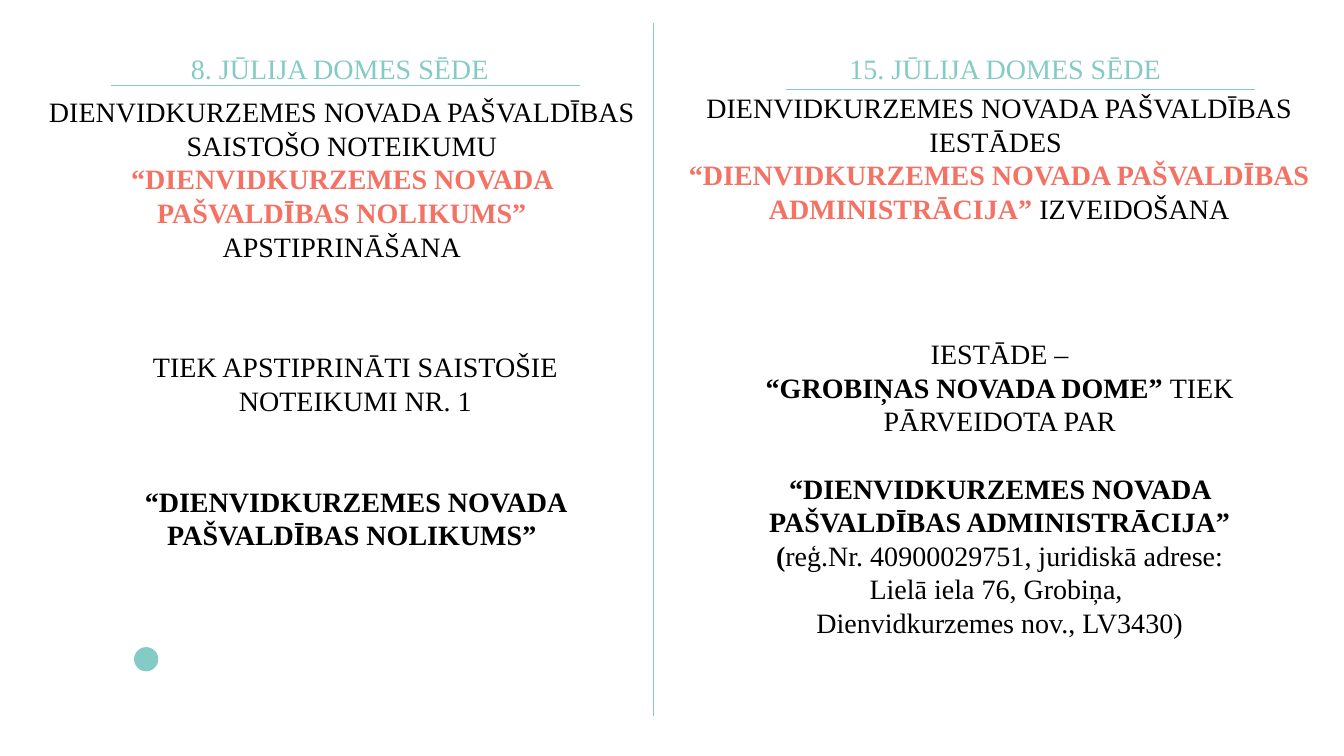
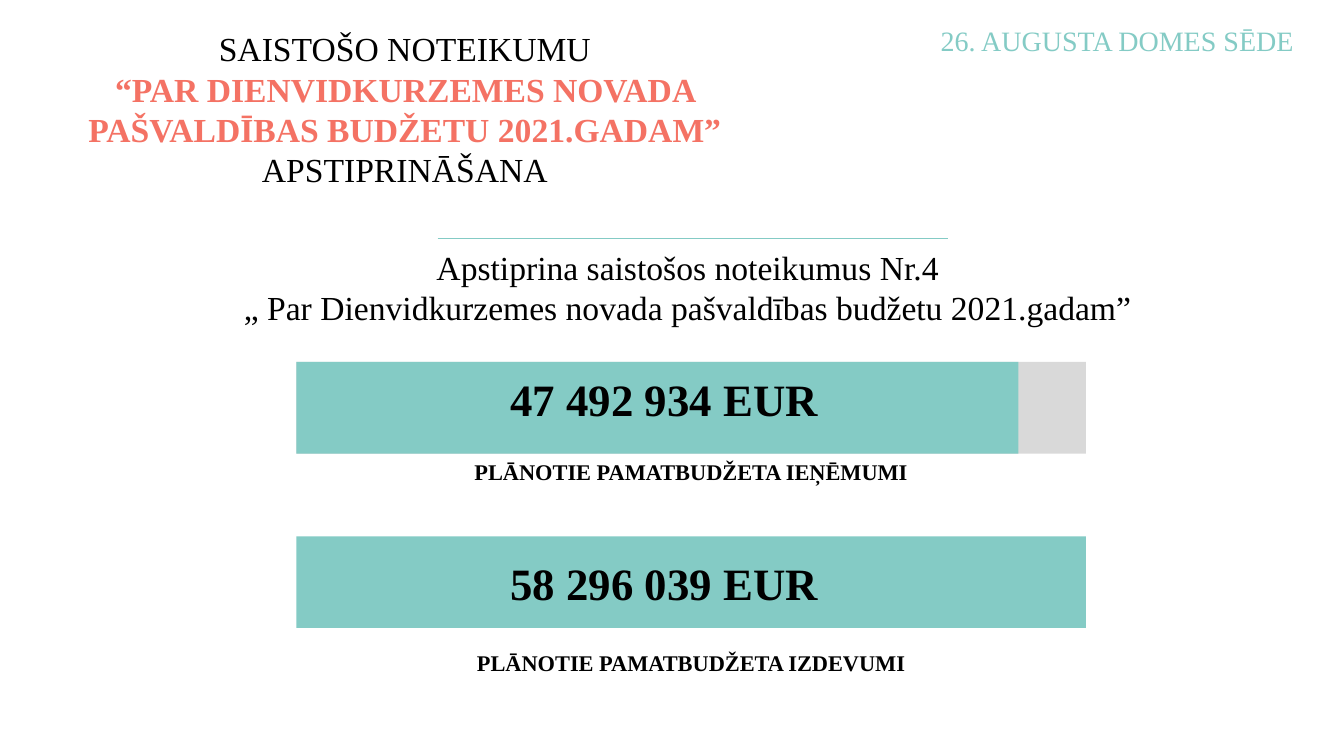
from pptx import Presentation
from pptx.dml.color import RGBColor
from pptx.enum.shapes import MSO_CONNECTOR as Link, MSO_SHAPE as Kind
from pptx.enum.text import PP_ALIGN as Align
from pptx.oxml.ns import qn
from pptx.util import Inches, Pt
from lxml.etree import SubElement

WIDE, HIGH = 13.33, 7.5
FONT = "Times New Roman"
TEAL, CORAL, BLACK, GREY = "84CBC5", "F47264", "000000", "D9D9D9"


def tint(code):
    """Turn a hex string into a colour."""
    return RGBColor.from_string(code)


def plain(text):
    """Describe a regular black run."""
    return text, BLACK, False


def bold(text, ink=BLACK):
    """Describe a bold run."""
    return text, ink, True


def write(slide, box, paras, size=20, gaps=()):
    """Place centred paragraphs of runs; gaps maps a paragraph to space before it."""
    frame = slide.shapes.add_textbox(*map(Inches, box)).text_frame
    frame.word_wrap = True
    for num, runs in enumerate(paras):
        para = frame.paragraphs[0] if num == 0 else frame.add_paragraph()
        para.alignment = Align.CENTER
        if num in gaps:
            para.space_before = Pt(gaps[num])
        for text, ink, heavy in runs:
            run = para.add_run()
            run.text = text
            font = run.font
            font.name, font.size, font.bold = FONT, Pt(size), heavy
            font.color.rgb = tint(ink)


def rule(slide, left, top, right, bottom):
    """Draw a thin teal line."""
    line = slide.shapes.add_connector(
        Link.STRAIGHT, *map(Inches, (left, top, right, bottom)))
    line.line.color.rgb = tint(TEAL)
    line.line.width = Pt(0.5)
    SubElement(line._element.spPr, qn("a:effectLst"))


def block(slide, kind, box, fill):
    """Draw a filled shape without outline."""
    shape = slide.shapes.add_shape(kind, *map(Inches, box))
    shape.shadow.inherit = False
    shape.fill.solid()
    shape.fill.fore_color.rgb = tint(fill)
    shape.line.fill.background()


def header(slide, left, top, text):
    """Write the teal heading of a council sitting."""
    write(slide, (left, top, 6.48, 0.44), [[(text, TEAL, False)]])


def panel(slide, left, title, line, topic, body):
    """Build one sitting: heading, rule, topic and decision, offset from left."""
    header(slide, left, 0.46, title)
    start, level = line
    rule(slide, left + start, level, left + start + 4.65, level)
    for (shift, top, width, height), paras, gaps in (topic, body):
        write(slide, (left + shift, top, width, height), paras, gaps=gaps)


def bar(slide, box, share, amount, label, drops):
    """Build a budget bar with its amount and the label below."""
    left, top, width, height = box
    if share < 1:
        block(slide, Kind.RECTANGLE, box, GREY)
    block(slide, Kind.RECTANGLE, (left, top, width * share, height), TEAL)
    inner, under = drops
    write(slide, (left + 1.08, top + inner, 5.14, 0.64), [[bold(amount)]], 32)
    write(slide, (left + 1.37, top + under, 5.09, 0.37), [[bold(label)]], 16)


def sittings(slide):
    """Build the slide with the two July sittings."""
    panel(
        slide, 0.13, "8. JŪLIJA DOMES SĒDE", (0.97, 0.85),
        ((0.2, 0.89, 6.12, 1.78), [[
            plain("DIENVIDKURZEMES NOVADA PAŠVALDĪBAS SAISTOŠO NOTEIKUMU "),
            bold("“DIENVIDKURZEMES NOVADA PAŠVALDĪBAS NOLIKUMS” ", CORAL),
            plain("APSTIPRINĀŠANA")]], {}),
        ((0.97, 3.42, 4.85, 2.12), [
            [plain("TIEK APSTIPRINĀTI SAISTOŠIE NOTEIKUMI NR. 1")],
            [bold("“DIENVIDKURZEMES NOVADA PAŠVALDĪBAS NOLIKUMS” ")]], {1: 48}))
    panel(
        slide, 6.73, "15. JŪLIJA DOMES SĒDE", (1.07, 0.89),
        ((-0.28, 0.85, 6.92, 1.45), [
            [plain("DIENVIDKURZEMES NOVADA PAŠVALDĪBAS IESTĀDES ")],
            [bold("“DIENVIDKURZEMES NOVADA PAŠVALDĪBAS ADMINISTRĀCIJA” ", CORAL),
             plain("IZVEIDOŠANA")]], {}),
        ((0.76, 3.29, 4.85, 3.13), [
            [plain("IESTĀDE –")],
            [bold("“GROBIŅAS NOVADA DOME” "), plain("TIEK PĀRVEIDOTA PAR")],
            [bold("“DIENVIDKURZEMES NOVADA PAŠVALDĪBAS ADMINISTRĀCIJA”")],
            [bold("("),
             plain("reģ.Nr. 40900029751, juridiskā adrese: Lielā iela 76, Grobiņa, ")],
            [plain("Dienvidkurzemes nov., LV3430)")]], {2: 24}))
    rule(slide, 6.48, 0.23, 6.48, 7.1)
    block(slide, Kind.OVAL, (1.33, 6.42, 0.24, 0.24), TEAL)


def budget(slide):
    """Build the slide with the budget of the August sitting."""
    write(slide, (0.3, 0.23, 7.43, 1.72), [
        [plain("SAISTOŠO NOTEIKUMU")],
        [bold("“PAR DIENVIDKURZEMES NOVADA PAŠVALDĪBAS BUDŽETU 2021.GADAM” ", CORAL),
         plain("APSTIPRINĀŠANA")]], 24)
    header(slide, 7.84, 0.18, "26. AUGUSTA DOMES SĒDE")
    rule(slide, 4.34, 2.36, 9.4, 2.36)
    write(slide, (1.69, 2.4, 10.26, 0.91), [
        [plain("Apstiprina saistošos noteikumus Nr.4")],
        [plain("„ Par Dienvidkurzemes novada pašvaldības budžetu 2021.gadam”")]], 24)
    bars = (
        (3.59, 7.16 / 7.83, "47 492 934 EUR",
         "PLĀNOTIE PAMATBUDŽETA IEŅĒMUMI", (0.05, 0.91)),
        (5.32, 1, "58 296 039 EUR",
         "PLĀNOTIE PAMATBUDŽETA IZDEVUMI", (0.14, 1.07)))
    for top, *rest in bars:
        bar(slide, (2.94, top, 7.83, 0.91), *rest)


def main():
    """Build and save the deck."""
    deck = Presentation()
    deck.slide_width, deck.slide_height = Inches(WIDE), Inches(HIGH)
    for build in (sittings, budget):
        build(deck.slides.add_slide(deck.slide_layouts[6]))
    deck.save("out.pptx")


if __name__ == "__main__":
    main()
